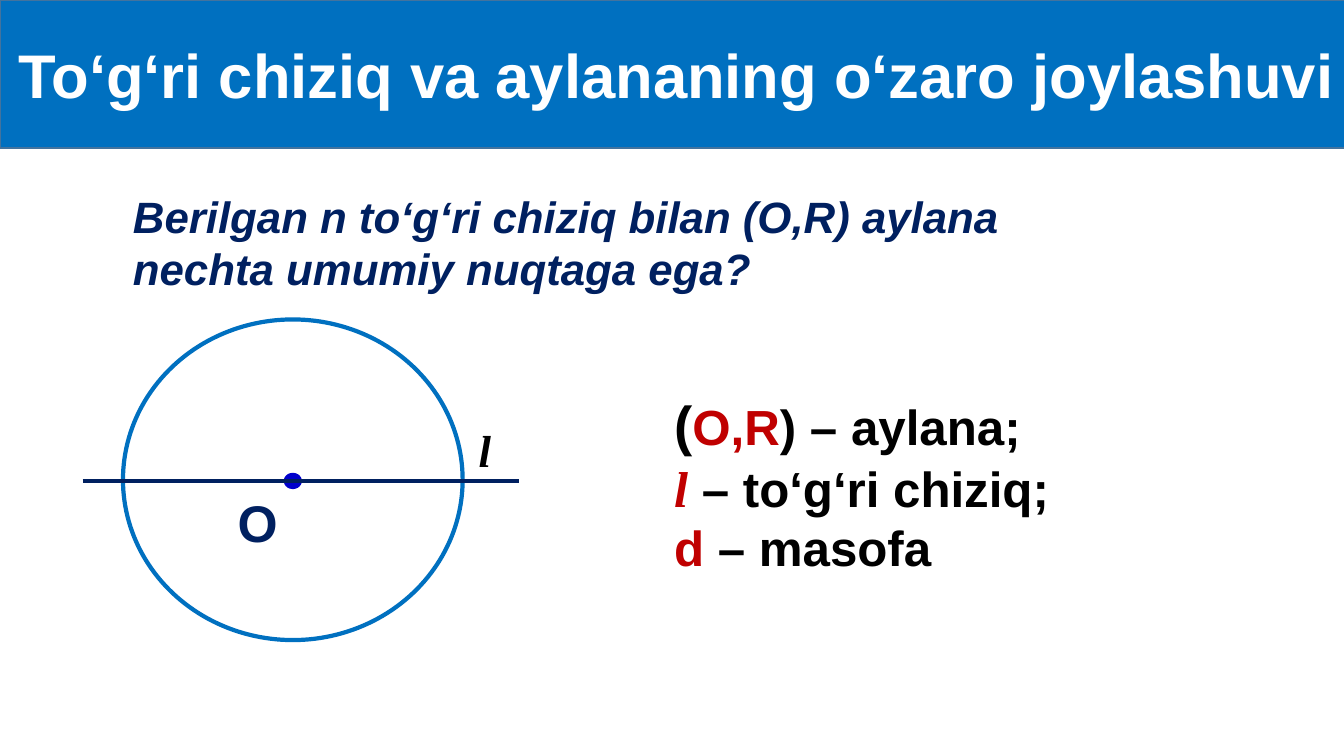
from dataclasses import dataclass

from lxml.etree import SubElement
from pptx import Presentation
from pptx.dml.color import RGBColor
from pptx.enum.shapes import MSO_CONNECTOR, MSO_SHAPE
from pptx.enum.text import MSO_ANCHOR, MSO_AUTO_SIZE, PP_ALIGN
from pptx.oxml.ns import qn
from pptx.util import Cm, Pt


@dataclass(frozen=True)
class Theme:
    """Colours, fonts and type sizes of the slide."""
    blue: str = "0070C0"
    edge: str = "43739E"
    navy: str = "002060"
    dot: str = "0000CC"
    red: str = "C00000"
    black: str = "000000"
    white: str = "FFFFFF"
    sans: str = "Arial"
    serif: str = "Times New Roman"
    title: float = 44
    question: float = 31.3
    bracket: float = 39.1
    definition: float = 35.2
    line_symbol: float = 36
    centre_label: float = 36.8
    line_label: float = 32


THEME = Theme()


def add_run(paragraph, text, color, size, **formats):
    """Append a bold run with the given format values."""
    run = paragraph.add_run()
    run.text = text
    values = {"name": THEME.sans, "size": Pt(size), "bold": True, **formats}
    for key, value in values.items():
        setattr(run.font, key, value)
    run.font.color.rgb = RGBColor.from_string(color)


def add_text(slide, box, paragraphs, wrap=True):
    """Place a text box whose paragraphs are lists of (text, color, size, formats)."""
    frame = slide.shapes.add_textbox(*map(Cm, box)).text_frame
    for key, value in {"word_wrap": wrap, "auto_size": MSO_AUTO_SIZE.SHAPE_TO_FIT_TEXT}.items():
        setattr(frame, key, value)
    for index, runs in enumerate(paragraphs):
        paragraph = frame.add_paragraph() if index else frame.paragraphs[0]
        for text, color, size, formats in runs:
            add_run(paragraph, text, color, size, **formats)


def add_figure(slide, preset, box, fill, outline, weight):
    """Place a preset shape, hollow when fill is None."""
    figure = slide.shapes.add_shape(preset, *map(Cm, box))
    figure.shadow.inherit = False
    if fill:
        figure.fill.solid()
        figure.fill.fore_color.rgb = RGBColor.from_string(fill)
    else:
        figure.fill.background()
    figure.line.color.rgb = RGBColor.from_string(outline)
    figure.line.width = Pt(weight)
    return figure


def add_header(slide, box):
    """Draw the title band."""
    band = add_figure(slide, MSO_SHAPE.RECTANGLE, box, THEME.blue, THEME.edge, 1)
    for key, value in {"word_wrap": True, "vertical_anchor": MSO_ANCHOR.MIDDLE}.items():
        setattr(band.text_frame, key, value)
    title = band.text_frame.paragraphs[0]
    title.alignment = PP_ALIGN.CENTER
    add_run(title, "To‘g‘ri chiziq va aylananing o‘zaro joylashuvi", THEME.white, THEME.title)


def add_question(slide, box):
    """Write the question below the title."""
    question = "Berilgan n to‘g‘ri chiziq bilan (O,R) aylana nechta umumiy nuqtaga ega?"
    add_text(slide, box, [[(question, THEME.navy, THEME.question, {"italic": True})]])


def add_circle_diagram(slide, box):
    """Draw the circle, its centre O and the line l across the box."""
    left, top, width, height = box
    circle_left, circle_width = left + 1.02, 8.56
    centre_x, centre_y = circle_left + circle_width / 2, top + height / 2 + 0.03
    dot_width, dot_height = 0.25, 0.2
    add_figure(slide, MSO_SHAPE.OVAL, (circle_left, top, circle_width, height),
               None, THEME.blue, 3)
    add_figure(slide, MSO_SHAPE.OVAL,
               (centre_x - dot_width / 2, centre_y - dot_height / 2, dot_width, dot_height),
               THEME.dot, THEME.dot, 6)
    secant = slide.shapes.add_connector(
        MSO_CONNECTOR.STRAIGHT, *map(Cm, (left, centre_y, left + width, centre_y)))
    secant.line.color.rgb = RGBColor.from_string(THEME.navy)
    secant.line.width = Pt(3)
    SubElement(secant.element.spPr, qn("a:effectLst"))
    add_text(slide, (centre_x - 1.64, centre_y + 0.12, 1.78, 1.83),
             [[("O", THEME.navy, THEME.centre_label, {})]])
    add_text(slide, (left + width - 1.27, centre_y - 1.6, 0.84, 3),
             [[("l", THEME.black, THEME.line_label, {"name": THEME.serif, "italic": True})]],
             wrap=False)


def add_definitions(slide, box):
    """List what each symbol stands for."""
    size = THEME.definition
    add_text(slide, box, [
        [("(", THEME.black, THEME.bracket, {}),
         ("O,R", THEME.red, size, {}),
         (") – aylana;", THEME.black, size, {})],
        [("l", THEME.red, THEME.line_symbol, {"name": THEME.serif, "italic": True}),
         (" ", THEME.red, size, {}),
         ("– to‘g‘ri chiziq;", THEME.black, size, {})],
        [("d ", THEME.red, size, {}),
         ("– masofa", THEME.black, size, {})],
    ], wrap=False)


def main():
    """Build and save the slide."""
    deck = Presentation()
    deck.slide_width, deck.slide_height = Cm(33.87), Cm(19.05)
    slide = deck.slides.add_slide(deck.slide_layouts[6])
    add_header(slide, (0, 0, 34.14, 3.73))
    add_question(slide, (3.1, 4.65, 23.16, 2.92))
    add_circle_diagram(slide, (2.08, 8.05, 11, 8.08))
    add_definitions(slide, (16.74, 9.73, 10.06, 4.98))
    deck.save("out.pptx")


if __name__ == "__main__":
    main()
